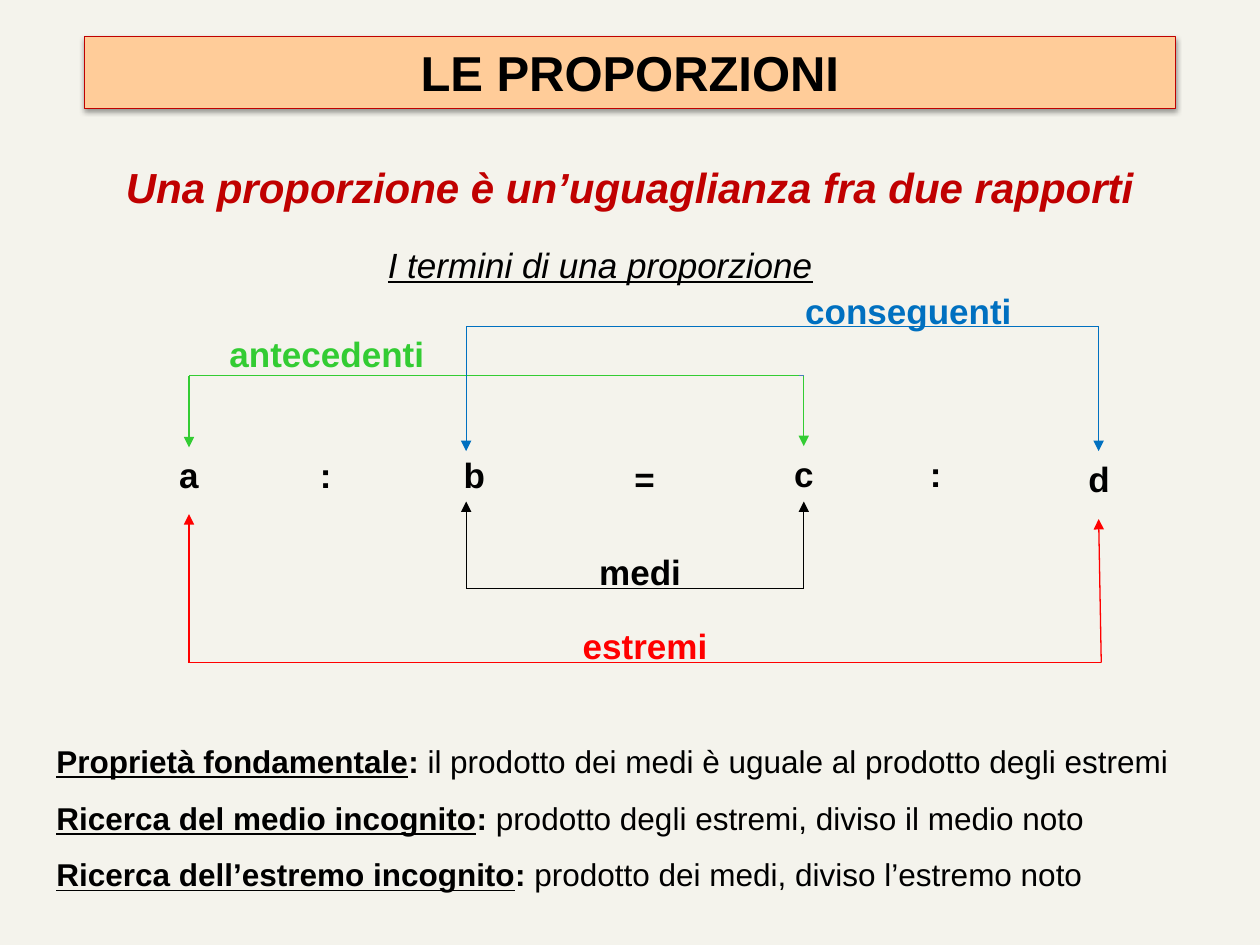
from dataclasses import dataclass
from lxml.etree import SubElement as Sub
from pptx import Presentation
from pptx.dml.color import RGBColor as Rgb
from pptx.enum.shapes import MSO_CONNECTOR as Conn, MSO_SHAPE as Kind
from pptx.enum.text import MSO_ANCHOR as Anchor, MSO_AUTO_SIZE as Fit, PP_ALIGN as Align
from pptx.oxml import parse_xml
from pptx.oxml.ns import nsdecls, qn
from pptx.util import Pt


@dataclass
class Theme:
    font: str = "Arial"
    back: str = "F4F3EC"
    peach: str = "FFCC99"
    dark: str = "C00000"
    ink: str = "000000"
    red: str = "FF0000"
    green: str = "33CC33"
    blue: str = "0070C0"
    steel: str = "4B7EBC"
    title: int = 28
    lead: int = 24
    term: int = 20
    body: int = 18
    line: float = 0.75


theme = Theme()
deck = Presentation()
deck.slide_width, deck.slide_height = Pt(720), Pt(540)
slide = deck.slides.add_slide(deck.slide_layouts[6])
shapes = slide.shapes
slide.background.fill.solid()
slide.background.fill.fore_color.rgb = Rgb.from_string(theme.back)


def write(shape, text, size, color, align=Align.CENTER, bold=True, italic=False, under=None):
    frame = shape.text_frame
    frame.word_wrap = True
    frame.auto_size = Fit.SHAPE_TO_FIT_TEXT
    frame.text = text
    for para in frame.paragraphs:
        para.alignment = align
        font = para.font
        font.name, font.size, font.bold = theme.font, Pt(size), bold
        font.italic, font.underline = italic, under
        font.color.rgb = Rgb.from_string(color)
    return shape


def link(start, end, color, arrow=False):
    line = shapes.add_connector(Conn.STRAIGHT, *map(Pt, start + end))
    line.line.color.rgb = Rgb.from_string(color)
    line.line.width = Pt(theme.line)
    if arrow:
        Sub(line.line._get_or_add_ln(), qn("a:tailEnd"), type="triangle")
    Sub(line._element.spPr, qn("a:effectLst"))
    return line


banner = shapes.add_shape(Kind.RECTANGLE, Pt(48.2), Pt(20.9), Pt(623.5), Pt(41))
banner.fill.solid()
banner.fill.fore_color.rgb = Rgb.from_string(theme.peach)
banner.line.color.rgb = Rgb.from_string(theme.dark)
banner.line.width = Pt(theme.line)
banner.text_frame.vertical_anchor = Anchor.MIDDLE
write(banner, "LE PROPORZIONI", theme.title, theme.ink)
banner._element.spPr.append(parse_xml(
    f'<a:effectLst {nsdecls("a")}><a:outerShdw blurRad="{Pt(3.1)}" dist="{Pt(1.6)}" '
    f'dir="5400000" rotWithShape="0"><a:srgbClr val="{theme.ink}">'
    '<a:alpha val="38000"/></a:srgbClr></a:outerShdw></a:effectLst>'))

lead = shapes.add_textbox(Pt(48.2), Pt(88.6), Pt(623.5), Pt(36))
write(lead, "Una proporzione è un’uguaglianza fra due rapporti", theme.lead, theme.dark, italic=True)
head = shapes.add_textbox(Pt(190), Pt(135.4), Pt(306), Pt(31.7))
write(head, "I termini di una proporzione", theme.term, theme.ink,
      bold=False, italic=True, under=True)

boxes = {}
for text, left, top, width, align in [
    ("a", 93.95, 255.6, 28.1, Align.CENTER),
    (":", 175.7, 255.6, 33.8, Align.LEFT),
    ("b", 257.8, 255.6, 36.7, Align.LEFT),
    ("=", 351.4, 257.8, 33.8, Align.CENTER),
    ("c", 439.5, 254.9, 39.6, Align.CENTER),
    (":", 524.2, 254.9, 28.1, Align.LEFT),
    ("d", 614.9, 257.8, 33.8, Align.LEFT),
]:
    box = shapes.add_textbox(Pt(left), Pt(top), Pt(width), Pt(31.7))
    boxes[text] = write(box, text, theme.term, theme.ink, align)

a, b, c, d = 108, 266.4, 459.3, 627.8
brackets = [
    (theme.red, 378.7, (a, a, 293.8, None), (629.3, d, 296.6, None)),
    (theme.ink, 336.2, (b, b, 286.6, None), (c, c, 286.6, ("c", 2))),
    (theme.green, 214.6, (a, a, 255.6, ("a", 0)), (c, c, 254.9, ("c", 0))),
    (theme.blue, 186.5, (b, b, 257.8, None), (d, d, 257.8, None)),
]
for color, bar, *ends in brackets:
    link((ends[0][0], bar), (ends[1][0], bar), color)
    for foot, tip, reach, joint in ends:
        arm = link((foot, bar), (tip, reach), color, True)
        if joint:
            arm.end_connect(boxes[joint[0]], joint[1])
link((456.5, 214.6), (c, 214.6), theme.steel)

for text, color, left, top, width in [
    ("estremi", theme.red, 280.8, 353.5, 175.7),
    ("medi", theme.ink, 311.8, 311, 108),
    ("antecedenti", theme.green, 115.9, 186.5, 141.8),
    ("conseguenti", theme.blue, 428.4, 162, 181.4),
]:
    write(shapes.add_textbox(Pt(left), Pt(top), Pt(width), Pt(31.7)), text, theme.term, color)

rules = [
    ("Proprietà fondamentale", "il prodotto dei medi è uguale al prodotto degli estremi"),
    ("Ricerca del medio incognito", "prodotto degli estremi, diviso il medio noto"),
    ("Ricerca dell’estremo incognito", "prodotto dei medi, diviso l’estremo noto"),
]
notes = shapes.add_textbox(Pt(25.2), Pt(409.7), Pt(674.6), Pt(105.1))
write(notes, "\n" * (len(rules) - 1), theme.body, theme.ink, Align.LEFT, bold=None)
for para, (name, rule) in zip(notes.text_frame.paragraphs, rules):
    para.line_spacing = 1.5
    for text, bold, under in [(name, True, True), (": ", True, False), (rule, False, False)]:
        run = para.add_run()
        run.text, run.font.bold, run.font.underline = text, bold, under

deck.save("out.pptx")
